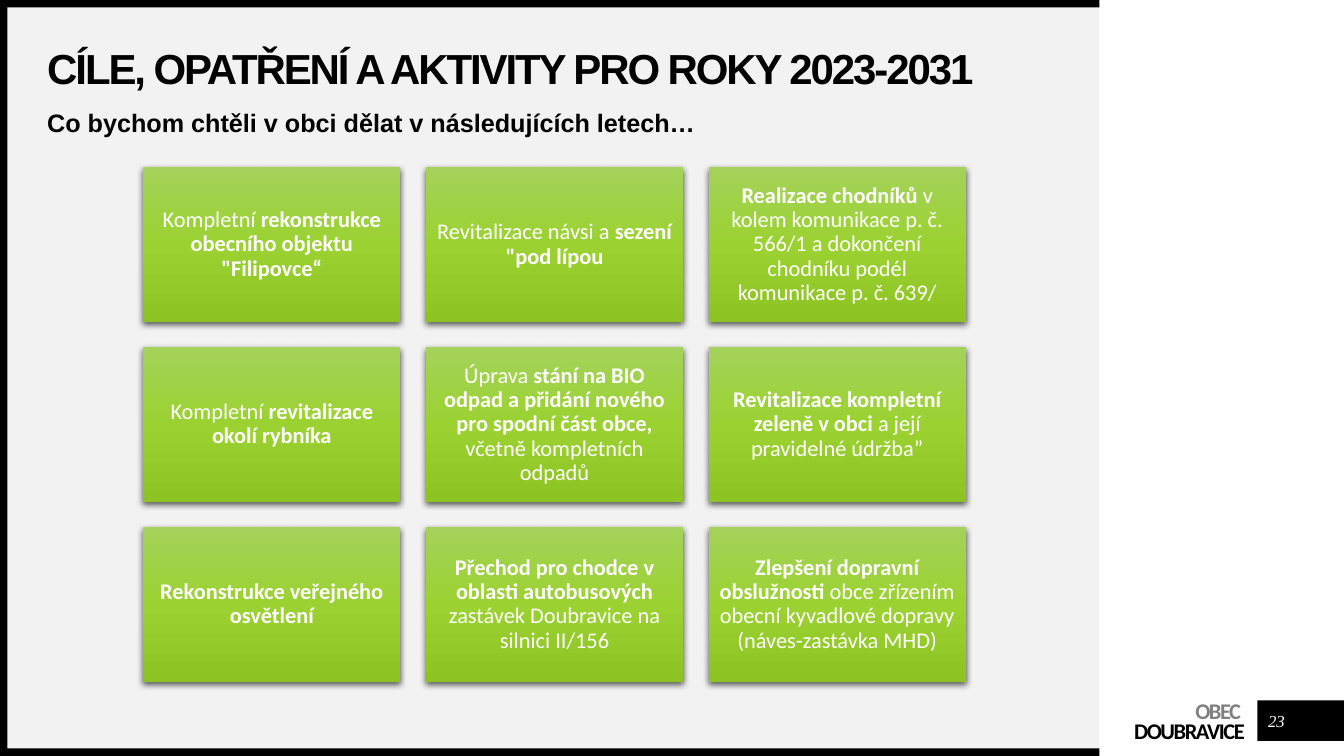
from copy import deepcopy

from pptx import Presentation
from pptx.dml.color import RGBColor
from pptx.enum.shapes import MSO_SHAPE as Shape
from pptx.enum.text import MSO_ANCHOR as Anchor, PP_ALIGN as Align
from pptx.oxml import parse_xml
from pptx.oxml.ns import qn
from pptx.util import Cm, Pt

BLACK, WHITE, GREY, PANEL = "000000", "FFFFFF", "808080", "F2F2F2"
CARD_GRADIENT = ("A4D25A", "9BD231", "8DC323")
SHADOW = (
    '<a:outerShdw xmlns:a="http://schemas.openxmlformats.org/drawingml/2006/main"'
    ' blurRad="57150" dist="19050" dir="5400000" algn="ctr" rotWithShape="0">'
    '<a:srgbClr val="000000"><a:alpha val="63000"/></a:srgbClr></a:outerShdw>'
)
# Asterisks enclose the bold part of each goal.
GOALS = [
    ["Kompletní *rekonstrukce obecního objektu \"Filipovce“*",
     "Revitalizace návsi a *sezení \"pod lípou*",
     "*Realizace chodníků *v kolem komunikace p. č. 566/1 a dokončení chodníku "
     "podél komunikace p. č. 639/"],
    ["Kompletní *revitalizace okolí rybníka*",
     "Úprava *stání na BIO odpad a přidání nového pro spodní část obce, *"
     "včetně kompletních odpadů",
     "*Revitalizace kompletní zeleně v obci *a její pravidelné údržba”"],
    ["*Rekonstrukce veřejného osvětlení*",
     "*Přechod pro chodce v oblasti autobusových *zastávek Doubravice na silnici II/156",
     "*Zlepšení dopravní obslužnosti *obce zřízením obecní kyvadlové dopravy "
     "(náves-zastávka MHD)"],
]


def color(hex_value):
    return RGBColor.from_string(hex_value)


def set_font(font, name, size, hex_value, bold=None):
    font.name, font.size, font.bold = name, Pt(size), bold
    font.color.rgb = color(hex_value)


def set_frame(frame, anchor, inset=0):
    frame.word_wrap = True
    frame.vertical_anchor = anchor
    frame.margin_left = frame.margin_right = Cm(inset)
    frame.margin_top = frame.margin_bottom = Cm(inset)


def set_tracking(run, points):
    run.font._element.set("spc", str(int(points * 100)))


def add_rectangle(slide, left, top, width, height, fill=None):
    shape = slide.shapes.add_shape(
        Shape.RECTANGLE, Cm(left), Cm(top), Cm(width), Cm(height))
    shape.shadow.inherit = False
    shape.line.fill.background()
    if fill:
        shape.fill.solid()
        shape.fill.fore_color.rgb = color(fill)
    return shape


def add_panel(slide, left, top, width, height, border=0.19):
    """Grey panel with black bars above, below and on its left."""
    add_rectangle(slide, left, top, width, height, PANEL)
    add_rectangle(slide, left, top, width, border, BLACK)
    add_rectangle(slide, left, top + height - border, width, border, BLACK)
    add_rectangle(slide, left, top, border, height, BLACK)


def fill_placeholder(placeholder, text, left, top, width, height, size, anchor):
    placeholder.left, placeholder.top = Cm(left), Cm(top)
    placeholder.width, placeholder.height = Cm(width), Cm(height)
    set_frame(placeholder.text_frame, anchor)
    paragraph = placeholder.text_frame.paragraphs[0]
    paragraph.text = text
    paragraph.alignment = Align.LEFT
    paragraph.line_spacing = 0.9
    set_font(paragraph.font, "Arial", size, BLACK, True)
    return paragraph


def add_heading(slide, left, top, width):
    title, subtitle = slide.placeholders
    paragraph = fill_placeholder(
        title, "CÍLE, OPATŘENÍ A AKTIVITY PRO ROKY 2023-2031",
        left, top, width, 1.19, 30, Anchor.MIDDLE)
    set_tracking(paragraph.runs[0], -1.5)
    paragraph = fill_placeholder(
        subtitle, "Co bychom chtěli v obci dělat v následujících letech…",
        left, top + 1.6, width, 1, 18, Anchor.TOP)
    paragraph.space_before = Pt(10)


def add_card(slide, text, left, top, width, height):
    card = add_rectangle(slide, left, top, width, height)
    card.fill.gradient()
    card.fill.gradient_angle = 270
    stops = card._element.spPr.find(".//" + qn("a:gsLst"))
    stops.insert(1, deepcopy(stops[0]))
    stops[1].set("pos", "50000")
    for stop, hex_value in zip(card.fill.gradient_stops, CARD_GRADIENT):
        stop.color.rgb = color(hex_value)
    card._element.spPr.find(qn("a:effectLst")).append(parse_xml(SHADOW))

    set_frame(card.text_frame, Anchor.MIDDLE, 0.18)
    paragraph = card.text_frame.paragraphs[0]
    paragraph.alignment = Align.CENTER
    paragraph.line_spacing = 0.9
    set_font(paragraph.font, "Calibri", 16, WHITE)
    for index, part in enumerate(text.split("*")):
        if part:
            run = paragraph.add_run()
            run.text = part
            run.font.bold = index % 2 == 1


def add_goal_grid(slide, left, top, width, height, gap=0.64):
    card_width = (width - gap * (len(GOALS[0]) - 1)) / len(GOALS[0])
    card_height = (height - gap * (len(GOALS) - 1)) / len(GOALS)
    for row, goals in enumerate(GOALS):
        for column, goal in enumerate(goals):
            add_card(slide, goal, left + column * (card_width + gap),
                     top + row * (card_height + gap), card_width, card_height)


def add_footer(slide, left, top, width, height):
    """Municipality name on the left, page number in a black box on the right."""
    box_width = 2.18
    name = slide.shapes.add_textbox(
        Cm(left), Cm(top), Cm(width - box_width - 0.32), Cm(height + 0.1))
    set_frame(name.text_frame, Anchor.TOP)
    name.text_frame.margin_top = Cm(0.1)
    paragraph = name.text_frame.paragraphs[0]
    paragraph.alignment = Align.RIGHT
    paragraph.line_spacing = Pt(14)
    set_font(paragraph.font, "Calibri", 16, BLACK, True)
    first = paragraph.add_run()
    first.text = "OBEC "
    first.font.color.rgb = color(GREY)
    paragraph.add_line_break()
    second = paragraph.add_run()
    second.text = "DOUBRAVICE"
    for run in (first, second):
        set_tracking(run, -1)

    box_left = left + width - box_width
    add_rectangle(slide, box_left, top, box_width, height, BLACK)
    number = slide.shapes.add_textbox(
        Cm(box_left + 0.1), Cm(top + 0.13), Cm(0.76), Cm(0.76))
    set_frame(number.text_frame, Anchor.MIDDLE)
    paragraph = number.text_frame.paragraphs[0]
    paragraph.text = "23"
    paragraph.alignment = Align.CENTER
    set_font(paragraph.font, "Times New Roman", 12, WHITE)
    paragraph.font.italic = True


def main():
    presentation = Presentation()
    presentation.slide_width, presentation.slide_height = Cm(33.87), Cm(19.05)
    section_layout = presentation.slide_layouts[2]
    slide = presentation.slides.add_slide(section_layout)
    for placeholder in list(slide.placeholders):
        # Keep the heading above the panel in the drawing order.
        slide.shapes._spTree.remove(placeholder._element)
        slide.shapes._spTree.append(placeholder._element)
    headings = [placeholder._element for placeholder in slide.placeholders]
    add_panel(slide, 0, 0, 27.71, 19.05)
    for heading in headings:
        slide.shapes._spTree.append(heading)
    add_heading(slide, 1.19, 1.19, 25.55)
    add_goal_grid(slide, 3.61, 4.22, 20.73, 12.96)
    add_footer(slide, 26.75, 17.65, 7.12, 1.02)
    presentation.save("out.pptx")


if __name__ == "__main__":
    main()
